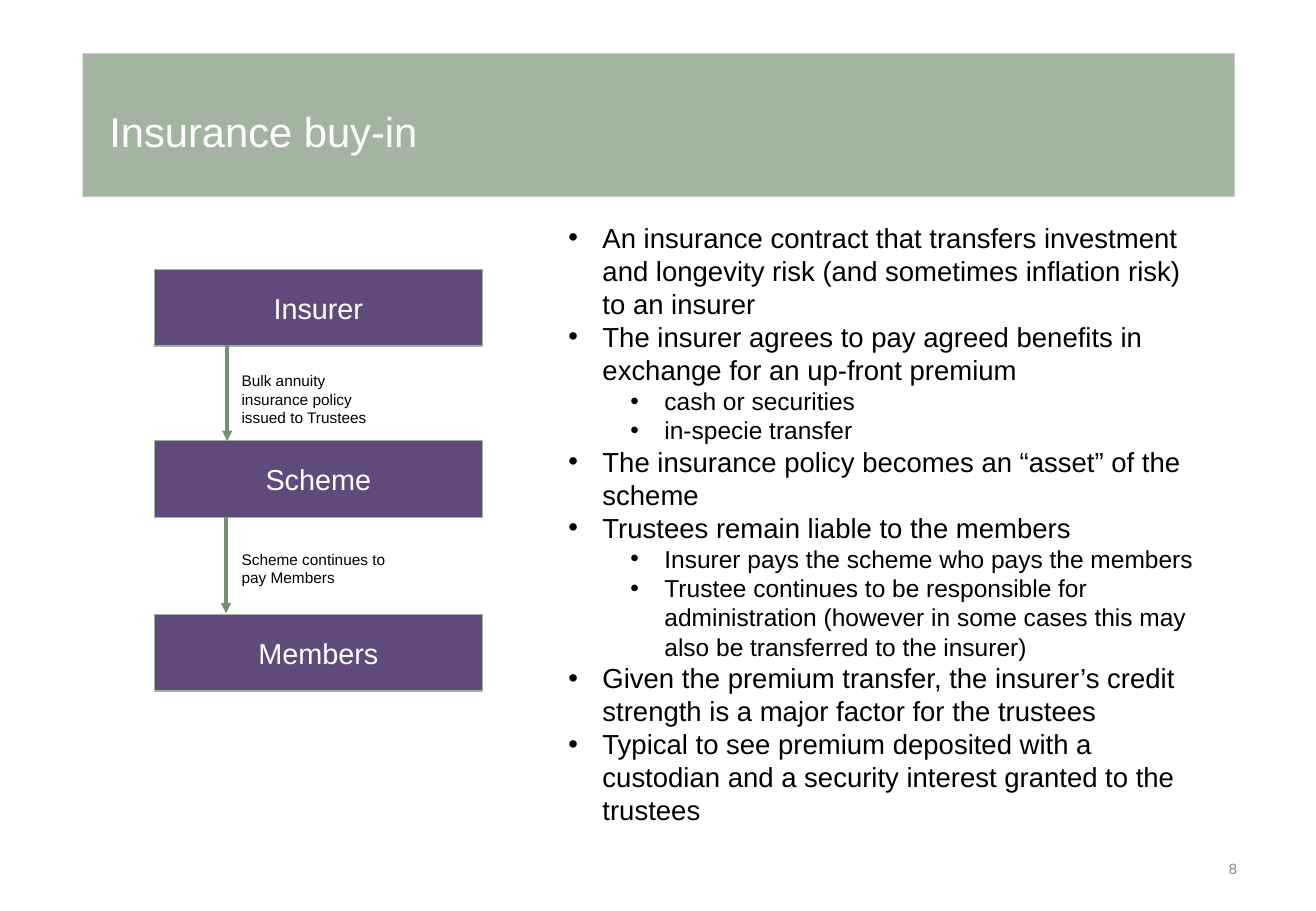
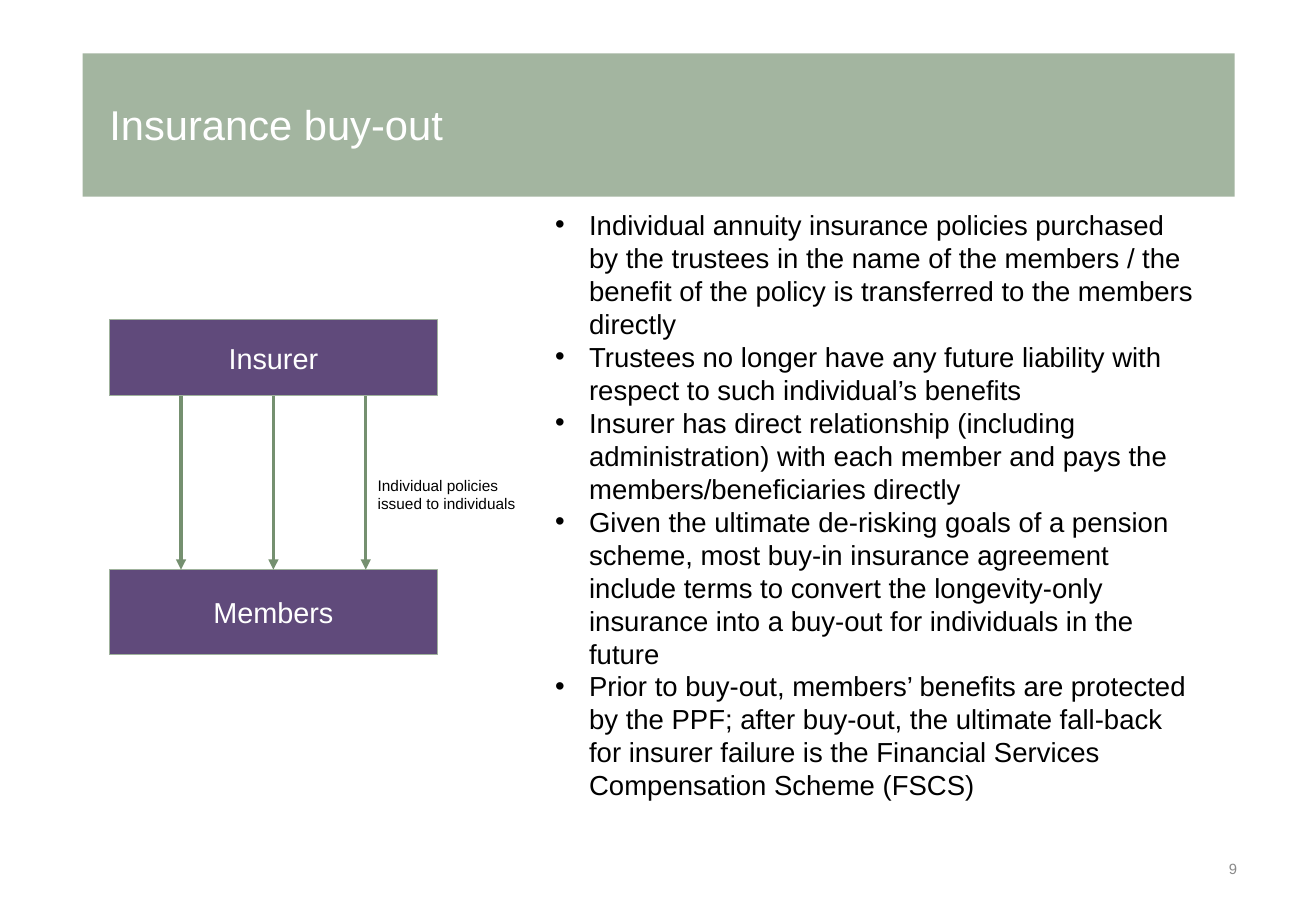
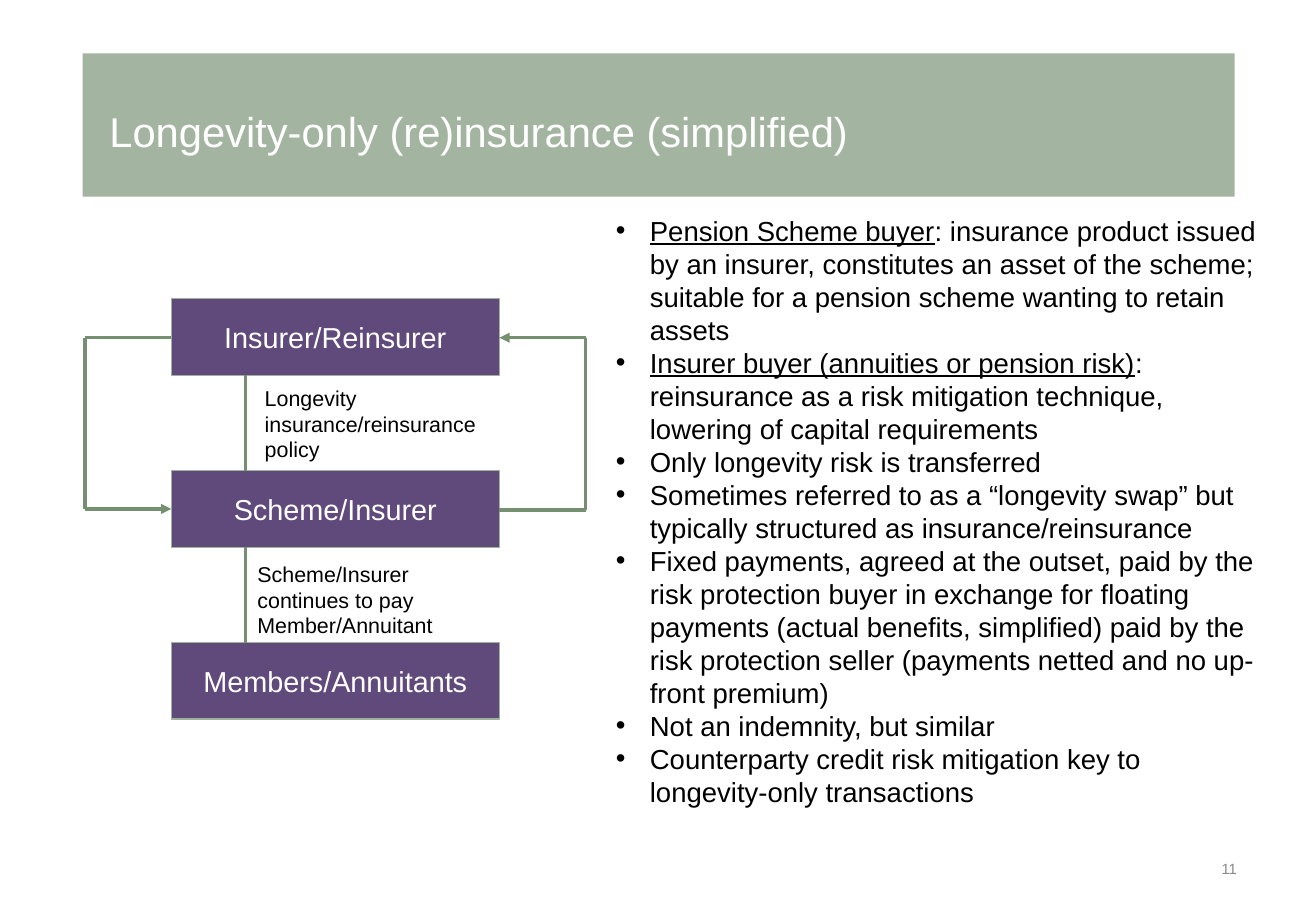
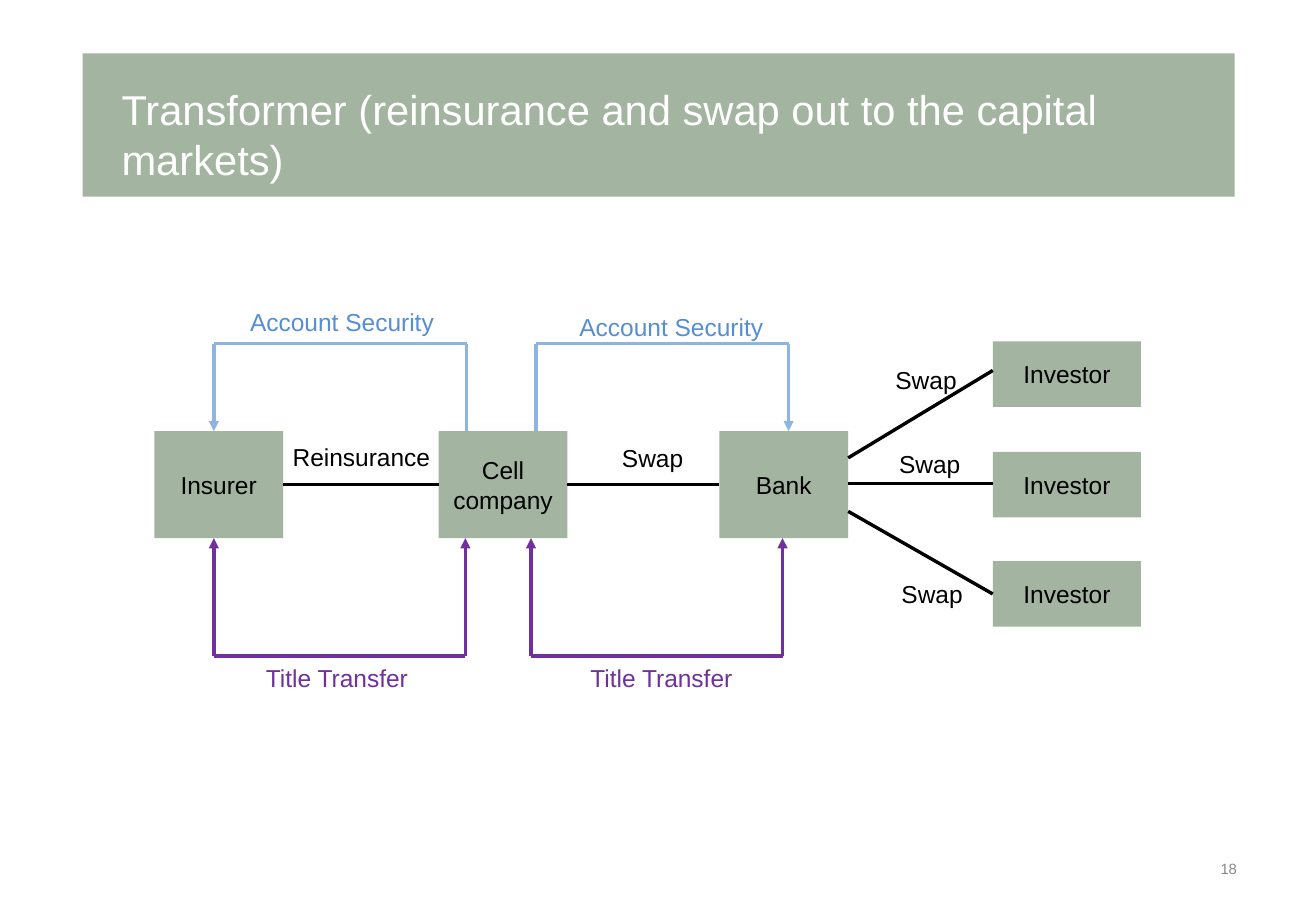
"""Build four slides on insurance risk transfer structures."""
from typing import NamedTuple

from pptx import Presentation
from pptx.dml.color import RGBColor
from pptx.enum.shapes import MSO_CONNECTOR, MSO_SHAPE
from pptx.enum.text import MSO_ANCHOR, MSO_AUTO_SIZE, PP_ALIGN
from pptx.oxml.xmlchemy import OxmlElement
from pptx.util import Inches, Pt

WHITE = RGBColor(0xFF, 0xFF, 0xFF)
BLACK = RGBColor(0x00, 0x00, 0x00)
GREY = RGBColor(0x89, 0x89, 0x89)
SAGE = RGBColor(0xA3, 0xB5, 0xA0)
SAGE_EDGE = RGBColor(0x9F, 0xB2, 0x9C)
GREEN = RGBColor(0x75, 0x90, 0x70)
PLUM = RGBColor(0x60, 0x4A, 0x7B)
VIOLET = RGBColor(0x70, 0x30, 0xA0)
SKY = RGBColor(0x8E, 0xB4, 0xE3)
BLUE = RGBColor(0x55, 0x8E, 0xD5)

FONT = "Arial"
TITLE_SIZE, NUMBER_SIZE, PARTY_SIZE = 24.7, 8.8, 17.1
NOTE_SIZE, POLICY_SIZE, DIAGRAM_SIZE = 9.1, 12.7, 14.5
BULLET_SIZES = (16.3, 14.5)
BULLET_MARGINS = (0.28, 0.79)
HANGING = 0.28
PARTY_WIDTH, PARTY_HEIGHT = 2.7, 0.63


class Bullet(NamedTuple):
    """A bullet with its level and an underlined lead."""
    text: str
    level: int = 0
    lead: str = ""


BUY_IN = [
    Bullet("An insurance contract that transfers investment and longevity risk (and sometimes inflation risk) to an insurer"),
    Bullet("The insurer agrees to pay agreed benefits in exchange for an up-front premium"),
    Bullet("cash or securities", 1),
    Bullet("in-specie transfer", 1),
    Bullet("The insurance policy becomes an “asset” of the scheme"),
    Bullet("Trustees remain liable to the members"),
    Bullet("Insurer pays the scheme who pays the members", 1),
    Bullet("Trustee continues to be responsible for administration (however in some cases this may also be transferred to the insurer)", 1),
    Bullet("Given the premium transfer, the insurer’s credit strength is a major factor for the trustees"),
    Bullet("Typical to see premium deposited with a custodian and a security interest granted to the trustees"),
]
BUY_OUT = [
    Bullet("Individual annuity insurance policies purchased by the trustees in the name of the members / the benefit of the policy is transferred to the members directly"),
    Bullet("Trustees no longer have any future liability with respect to such individual’s benefits"),
    Bullet("Insurer has direct relationship (including administration) with each member and pays the members/beneficiaries directly"),
    Bullet("Given the ultimate de-risking goals of a pension scheme, most buy-in insurance agreement include terms to convert the longevity-only insurance into a buy-out for individuals in the future"),
    Bullet("Prior to buy-out, members’ benefits are protected by the PPF; after buy-out, the ultimate fall-back for insurer failure is the Financial Services Compensation Scheme (FSCS)"),
]
LONGEVITY = [
    Bullet(": insurance product issued by an insurer, constitutes an asset of the scheme; suitable for a pension scheme wanting to retain assets", lead="Pension Scheme buyer"),
    Bullet(": reinsurance as a risk mitigation technique, lowering of capital requirements", lead="Insurer buyer (annuities or pension risk)"),
    Bullet("Only longevity risk is transferred"),
    Bullet("Sometimes referred to as a “longevity swap” but typically structured as insurance/reinsurance"),
    Bullet("Fixed payments, agreed at the outset, paid by the risk protection buyer in exchange for floating payments (actual benefits, simplified) paid by the risk protection seller (payments netted and no up-front premium)"),
    Bullet("Not an indemnity, but similar"),
    Bullet("Counterparty credit risk mitigation key to longevity-only transactions"),
]


def style_run(run, size, colour):
    """Set the font of a run."""
    run.font.name = FONT
    run.font.size = Pt(size)
    run.font.color.rgb = colour


def write(text_frame, text, size, colour, align=PP_ALIGN.LEFT, anchor=MSO_ANCHOR.TOP):
    """Fill a text frame with one styled paragraph."""
    text_frame.text = text
    text_frame.word_wrap = True
    text_frame.vertical_anchor = anchor
    paragraph = text_frame.paragraphs[0]
    paragraph.alignment = align
    style_run(paragraph.runs[0], size, colour)


def set_wide_margins(text_frame):
    """Give a text frame the margins of titles and page numbers."""
    text_frame.margin_left = text_frame.margin_right = Inches(0.11)
    text_frame.margin_top = text_frame.margin_bottom = Inches(0.06)


def add_rectangle(slide, left, top, width, height, fill, edge=None):
    """Add a flat rectangle with an optional thin edge."""
    shape = slide.shapes.add_shape(
        MSO_SHAPE.RECTANGLE, Inches(left), Inches(top), Inches(width), Inches(height))
    shape.shadow.inherit = False
    shape.fill.solid()
    shape.fill.fore_color.rgb = fill
    if edge is None:
        shape.line.fill.background()
    else:
        shape.line.color.rgb = edge
        shape.line.width = Pt(0.75)
    return shape


def add_party(slide, left, top, name, height=PARTY_HEIGHT):
    """Add a plum box that names a party."""
    shape = add_rectangle(slide, left, top, PARTY_WIDTH, height, PLUM, SAGE_EDGE)
    write(shape.text_frame, name, PARTY_SIZE, WHITE, PP_ALIGN.CENTER, MSO_ANCHOR.MIDDLE)


def add_node(slide, left, top, width, height, name):
    """Add a sage box of the transformer diagram."""
    shape = add_rectangle(slide, left, top, width, height, SAGE)
    write(shape.text_frame, name, DIAGRAM_SIZE, BLACK, PP_ALIGN.CENTER, MSO_ANCHOR.MIDDLE)


def add_label(slide, left, top, width, height, text, size=DIAGRAM_SIZE, colour=BLACK):
    """Add a text label."""
    label = slide.shapes.add_textbox(Inches(left), Inches(top), Inches(width), Inches(height))
    write(label.text_frame, text, size, colour)


def add_route(slide, points, colour=GREEN, start_arrow=False, end_arrow=False):
    """Join points with straight lines, with arrowheads at the ends if asked."""
    last = len(points) - 2
    for index, (start, end) in enumerate(zip(points, points[1:])):
        connector = slide.shapes.add_connector(
            MSO_CONNECTOR.STRAIGHT, *(Inches(value) for value in start + end))
        connector.line.color.rgb = colour
        connector.line.width = Pt(2)
        line = connector.line._get_or_add_ln()
        for tag, wanted in (("a:headEnd", start_arrow and index == 0),
                            ("a:tailEnd", end_arrow and index == last)):
            if wanted:
                arrowhead = OxmlElement(tag)
                arrowhead.set("type", "triangle")
                line.append(arrowhead)
        connector._element.spPr.append(OxmlElement("a:effectLst"))


def format_bullet(paragraph, level):
    """Give a paragraph its level, hanging indent and bullet."""
    paragraph.level = level
    properties = paragraph._p.get_or_add_pPr()
    properties.set("marL", str(Inches(BULLET_MARGINS[level])))
    properties.set("indent", str(-Inches(HANGING)))
    for tag, attribute, value in (("a:buFont", "typeface", FONT), ("a:buChar", "char", "•")):
        element = OxmlElement(tag)
        element.set(attribute, value)
        properties.append(element)


def add_bullets(slide, left, top, bullets):
    """Add the column of bullets."""
    column = slide.shapes.add_textbox(Inches(left), Inches(top), Inches(5.47), Inches(5.3))
    text_frame = column.text_frame
    text_frame.word_wrap = True
    for index, bullet in enumerate(bullets):
        paragraph = text_frame.add_paragraph() if index else text_frame.paragraphs[0]
        format_bullet(paragraph, bullet.level)
        for text, underline in ((bullet.lead, True), (bullet.text, False)):
            if text:
                run = paragraph.add_run()
                run.text = text
                style_run(run, BULLET_SIZES[bullet.level], BLACK)
                run.font.underline = underline


def add_title_band(layout, slide):
    """Draw the title band and move it behind the placeholders of the layout."""
    band = add_rectangle(slide, 0.68, 0.44, 9.48, 1.18, SAGE)
    band._element.nvSpPr.cNvPr.set("id", "20")
    layout.shapes.element.insert(2, band._element)


def add_titled_slide(presentation, title, number, left=0.79, top=0.81, width=9.75):
    """Add a slide with its title and page number."""
    layout = presentation.slide_layouts[5]
    slide = presentation.slides.add_slide(layout)
    if len(presentation.slides) == 1:
        add_title_band(layout, slide)
    heading = slide.shapes.title
    heading.left, heading.top = Inches(left), Inches(top)
    heading.width, heading.height = Inches(width), Inches(1.05)
    write(heading.text_frame, title, TITLE_SIZE, WHITE)
    heading.text_frame.auto_size = MSO_AUTO_SIZE.NONE
    set_wide_margins(heading.text_frame)
    page = slide.shapes.add_textbox(Inches(7.76), Inches(6.95), Inches(2.53), Inches(0.4))
    write(page.text_frame, str(number), NUMBER_SIZE, GREY, PP_ALIGN.RIGHT, MSO_ANCHOR.MIDDLE)
    set_wide_margins(page.text_frame)
    return slide


def build_buy_in(presentation):
    """Build the buy-in slide."""
    slide = add_titled_slide(presentation, "Insurance buy-in", 8)
    for top, name in ((2.22, "Insurer"), (3.63, "Scheme"), (5.06, "Members")):
        add_party(slide, 1.27, top, name)
    add_route(slide, [(1.87, 2.84), (1.87, 3.63)], end_arrow=True)
    add_route(slide, [(1.86, 4.26), (1.86, 5.05)], end_arrow=True)
    add_label(slide, 1.89, 3.01, 1.46, 0.56,
              "Bulk annuity insurance policy issued to Trustees", NOTE_SIZE)
    add_label(slide, 1.89, 4.48, 1.46, 0.41, "Scheme continues to pay Members", NOTE_SIZE)
    add_bullets(slide, 4.58, 1.77, BUY_IN)


def build_buy_out(presentation):
    """Build the buy-out slide."""
    slide = add_titled_slide(presentation, "Insurance buy-out", 9, top=0.75)
    add_party(slide, 0.9, 2.63, "Insurer")
    add_party(slide, 0.9, 4.69, "Members", 0.7)
    for x in (1.49, 2.25, 3.01):
        add_route(slide, [(x, 3.26), (x, 4.69)], end_arrow=True)
    add_label(slide, 3.01, 3.87, 1.46, 0.41, "Individual policies issued to individuals", NOTE_SIZE)
    add_bullets(slide, 4.47, 1.66, BUY_OUT)


def build_longevity(presentation):
    """Build the longevity-only slide."""
    slide = add_titled_slide(presentation, "Longevity-only (re)insurance (simplified)", 11)
    parties = ("Insurer/Reinsurer", "Scheme/Insurer", "Members/Annuitants")
    for index, name in enumerate(parties):
        add_party(slide, 1.41, 2.46 + 1.415 * index, name)
    for top in (3.09, 4.5):
        add_route(slide, [(2.02, top), (2.02, top + 0.79)])
    add_route(slide, [(1.41, 2.78), (0.7, 2.78), (0.7, 4.19), (1.41, 4.19)], end_arrow=True)
    add_route(slide, [(4.11, 4.2), (4.82, 4.2), (4.82, 2.78), (4.11, 2.78)], end_arrow=True)
    add_label(slide, 2.08, 3.12, 1.98, 0.74,
              "Longevity insurance/reinsurance policy", POLICY_SIZE)
    add_label(slide, 2.02, 4.57, 1.8, 0.74,
              "Scheme/Insurer continues to pay Member/Annuitant", POLICY_SIZE)
    add_bullets(slide, 4.97, 1.71, LONGEVITY)


def build_transformer(presentation):
    """Build the transformer slide."""
    slide = add_titled_slide(
        presentation, "Transformer (reinsurance and swap out to the capital markets)", 18,
        left=0.89, top=0.63, width=9.54)
    for left, name in ((1.27, "Insurer"), (3.61, "Cell company"), (5.92, "Bank")):
        add_node(slide, left, 3.55, 1.06, 0.88, name)
    for top in (2.81, 3.72, 4.62):
        add_node(slide, 8.17, top, 1.22, 0.54, "Investor")
    for start, end in (((2.33, 3.99), (3.61, 3.99)), ((4.67, 3.99), (5.92, 3.99)),
                       ((6.98, 3.77), (8.17, 3.05)), ((6.98, 3.98), (8.17, 3.98)),
                       ((6.98, 4.21), (8.17, 4.89))):
        add_route(slide, [start, end], BLACK)
    for source, target in ((3.84, 1.76), (4.41, 6.49)):
        add_route(slide, [(source, 3.55), (source, 2.83), (target, 2.83), (target, 3.55)],
                  SKY, end_arrow=True)
    for left, right in ((1.76, 3.83), (4.37, 6.44)):
        add_route(slide, [(left, 4.43), (left, 5.4), (right, 5.4), (right, 4.43)],
                  VIOLET, start_arrow=True, end_arrow=True)
    for left, top, width, text, colour in (
            (2.31, 3.59, 1.36, "Reinsurance", BLACK),
            (5.02, 3.6, 1.19, "Swap", BLACK),
            (7.27, 2.96, 1.19, "Swap", BLACK),
            (7.3, 3.65, 1.19, "Swap", BLACK),
            (7.32, 4.72, 1.19, "Swap", BLACK),
            (1.96, 2.48, 1.8, "Account Security", BLUE),
            (4.67, 2.52, 1.8, "Account Security", BLUE),
            (2.09, 5.41, 1.5, "Title Transfer", VIOLET),
            (4.76, 5.41, 1.5, "Title Transfer", VIOLET)):
        add_label(slide, left, top, width, 0.35, text, colour=colour)


def main():
    """Build and save the presentation."""
    presentation = Presentation()
    presentation.slide_width = Inches(10.83)
    presentation.slide_height = Inches(7.5)
    build_buy_in(presentation)
    build_buy_out(presentation)
    build_longevity(presentation)
    build_transformer(presentation)
    presentation.save("out.pptx")


if __name__ == "__main__":
    main()
